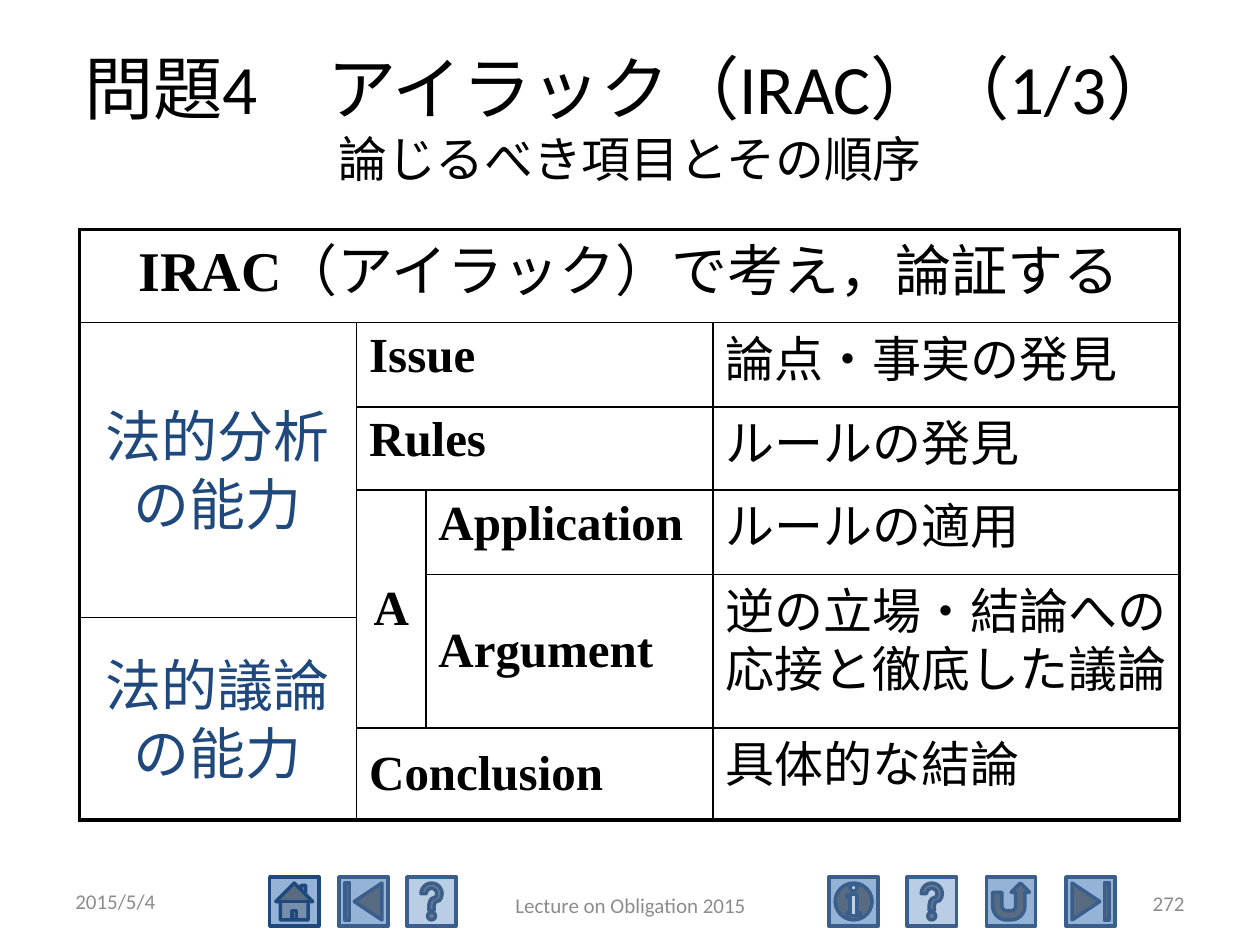
from pptx import Presentation
from pptx.dml.color import RGBColor
from pptx.enum.shapes import MSO_SHAPE as Shape
from pptx.enum.text import MSO_ANCHOR as Anchor, MSO_AUTO_SIZE as AutoSize, PP_ALIGN as Align
from pptx.oxml.xmlchemy import OxmlElement
from pptx.util import Inches, Pt

COLORS = {
    "text": "000000", "navy": "1F497D", "edge": "3A5F8C",
    "button": "95B3D7", "help": "B9CDE5", "muted": "8C8C8C",
}
SERIF, SANS, BODY = "Times New Roman", "Lato", "Calibri"

TITLE = [("問題4\u3000アイラック（IRAC）（1/3）", 39.6), ("論じるべき項目とその順序", 27.9)]

BUTTONS = [
    (Shape.ACTION_BUTTON_HOME, 2.14, "button", "navy"),
    (Shape.ACTION_BUTTON_BEGINNING, 2.69, "button", "edge"),
    (Shape.ACTION_BUTTON_HELP, 3.23, "help", "edge"),
    (Shape.ACTION_BUTTON_INFORMATION, 6.58, "button", "edge"),
    (Shape.ACTION_BUTTON_HELP, 7.2, "help", "edge"),
    (Shape.ACTION_BUTTON_RETURN, 7.83, "button", "edge"),
    (Shape.ACTION_BUTTON_END, 8.46, "button", "edge"),
]
BUTTON_TOP, BUTTON_SIZE = 6.96, 0.39

FOOTERS = [
    ("2015/5/4", 0.5, 6.95, 2.33, Align.LEFT),
    ("Lecture on Obligation 2015", 3.42, 6.98, 3.17, Align.CENTER),
    ("272", 7.17, 6.97, 2.33, Align.RIGHT),
]

COLUMNS = [2.2, 0.55, 2.28, 3.7]
ROWS = [0.74, 0.67, 0.66, 0.67, 0.34, 0.88, 0.73]

STYLES = {
    "head": (32, "text", Align.CENTER),
    "skill": (32, "navy", Align.CENTER),
    "letter": (28, "text", Align.CENTER),
    "item": (28, "text", Align.LEFT),
}
TOP, MIDDLE = Anchor.TOP, Anchor.MIDDLE
CELLS = [
    (0, 0, 1, 4, "head", TOP, [("IRAC", SERIF), ("（アイラック）で考え，論証する", SANS)]),
    (1, 0, 4, 1, "skill", MIDDLE, [("法的分析の能力", SANS)]),
    (5, 0, 2, 1, "skill", MIDDLE, [("法的議論の能力", SANS)]),
    (1, 1, 1, 2, "item", TOP, [("Issue", SERIF)]),
    (2, 1, 1, 2, "item", TOP, [("Rules", SERIF)]),
    (3, 1, 3, 1, "letter", MIDDLE, [("A", SERIF)]),
    (3, 2, 1, 1, "item", TOP, [("Application", SERIF)]),
    (4, 2, 2, 1, "item", MIDDLE, [("Argument", SERIF)]),
    (6, 1, 1, 2, "item", MIDDLE, [("Conclusion", SERIF)]),
    (1, 3, 1, 1, "item", TOP, [("論点・事実の発見", SANS)]),
    (2, 3, 1, 1, "item", TOP, [("ルールの発見", SANS)]),
    (3, 3, 1, 1, "item", TOP, [("ルールの適用", SANS)]),
    (4, 3, 2, 1, "item", TOP, [("逆の立場・結論への応接と徹底した議論", SANS)]),
    (6, 3, 1, 1, "item", TOP, [("具体的な結論", SANS)]),
]


def rgb(name):
    return RGBColor.from_string(COLORS[name])


def box(*lengths):
    return [Inches(length) for length in lengths]


def set_font(font, size, color, name, bold=False):
    font.size, font.name, font.bold = Pt(size), name, bold
    font.color.rgb = rgb(color)


def set_east_asian_font(run, name):
    typeface = OxmlElement("a:ea")
    typeface.set("typeface", name)
    run._r.get_or_add_rPr().append(typeface)


def add_title(slide):
    title = slide.shapes.title
    title.left, title.top, title.width, title.height = box(0.5, 0.3, 9, 1.25)
    frame = title.text_frame
    frame.auto_size, frame.vertical_anchor = AutoSize.NONE, MIDDLE
    paragraph = frame.paragraphs[0]
    paragraph.alignment = Align.CENTER
    for index, (text, size) in enumerate(TITLE):
        if index:
            paragraph.add_line_break()
        run = paragraph.add_run()
        run.text = text
        set_font(run.font, size, "text", BODY)


def add_buttons(slide):
    for kind, left, fill, line in BUTTONS:
        button = slide.shapes.add_shape(kind, *box(left, BUTTON_TOP, BUTTON_SIZE, BUTTON_SIZE))
        button.shadow.inherit = False
        button.fill.solid()
        button.fill.fore_color.rgb = rgb(fill)
        button.line.color.rgb = rgb(line)
        button.line.width = Pt(2)


def add_footers(slide):
    for text, left, top, width, alignment in FOOTERS:
        frame = slide.shapes.add_textbox(*box(left, top, width, 0.4)).text_frame
        frame.word_wrap, frame.vertical_anchor = True, MIDDLE
        paragraph = frame.paragraphs[0]
        paragraph.text, paragraph.alignment = text, alignment
        set_font(paragraph.font, 12, "muted", BODY)


def add_border(properties, side, width):
    line = OxmlElement(f"a:ln{side}")
    line.set("w", str(Pt(width)))
    fill = OxmlElement("a:solidFill")
    color = OxmlElement("a:srgbClr")
    color.set("val", COLORS["text"])
    fill.append(color)
    line.append(fill)
    properties.append(line)


def format_borders(table, row, column, height, width):
    outer_sides = [
        ("L", column == 0),
        ("R", column + width == len(COLUMNS)),
        ("T", row == 0),
        ("B", row + height == len(ROWS)),
    ]
    for r in range(row, row + height):
        for c in range(column, column + width):
            cell = table.cell(r, c)
            properties = cell._tc.get_or_add_tcPr()
            for side, outer in outer_sides:
                add_border(properties, side, 2.25 if outer else 1)
            cell.fill.background()


def add_table(slide):
    frame = slide.shapes.add_table(len(ROWS), len(COLUMNS), *box(0.63, 1.82, sum(COLUMNS), sum(ROWS)))
    table = frame.table
    table.first_row = table.horz_banding = False
    for column, width in zip(table.columns, COLUMNS):
        column.width = Inches(width)
    for row, height in zip(table.rows, ROWS):
        row.height = Inches(height)
    for row, column, height, width, style, anchor, runs in CELLS:
        cell = table.cell(row, column)
        if height * width > 1:
            cell.merge(table.cell(row + height - 1, column + width - 1))
        format_borders(table, row, column, height, width)
        size, color, alignment = STYLES[style]
        cell.vertical_anchor = anchor
        paragraph = cell.text_frame.paragraphs[0]
        paragraph.alignment = alignment
        for text, name in runs:
            run = paragraph.add_run()
            run.text = text
            set_font(run.font, size, color, name, bold=name == SERIF)
            set_east_asian_font(run, name)


def main():
    presentation = Presentation()
    presentation.slide_width, presentation.slide_height = box(10, 7.5)
    slide = presentation.slides.add_slide(presentation.slide_layouts[5])
    add_buttons(slide)
    add_title(slide)
    add_footers(slide)
    add_table(slide)
    presentation.save("out.pptx")


if __name__ == "__main__":
    main()
